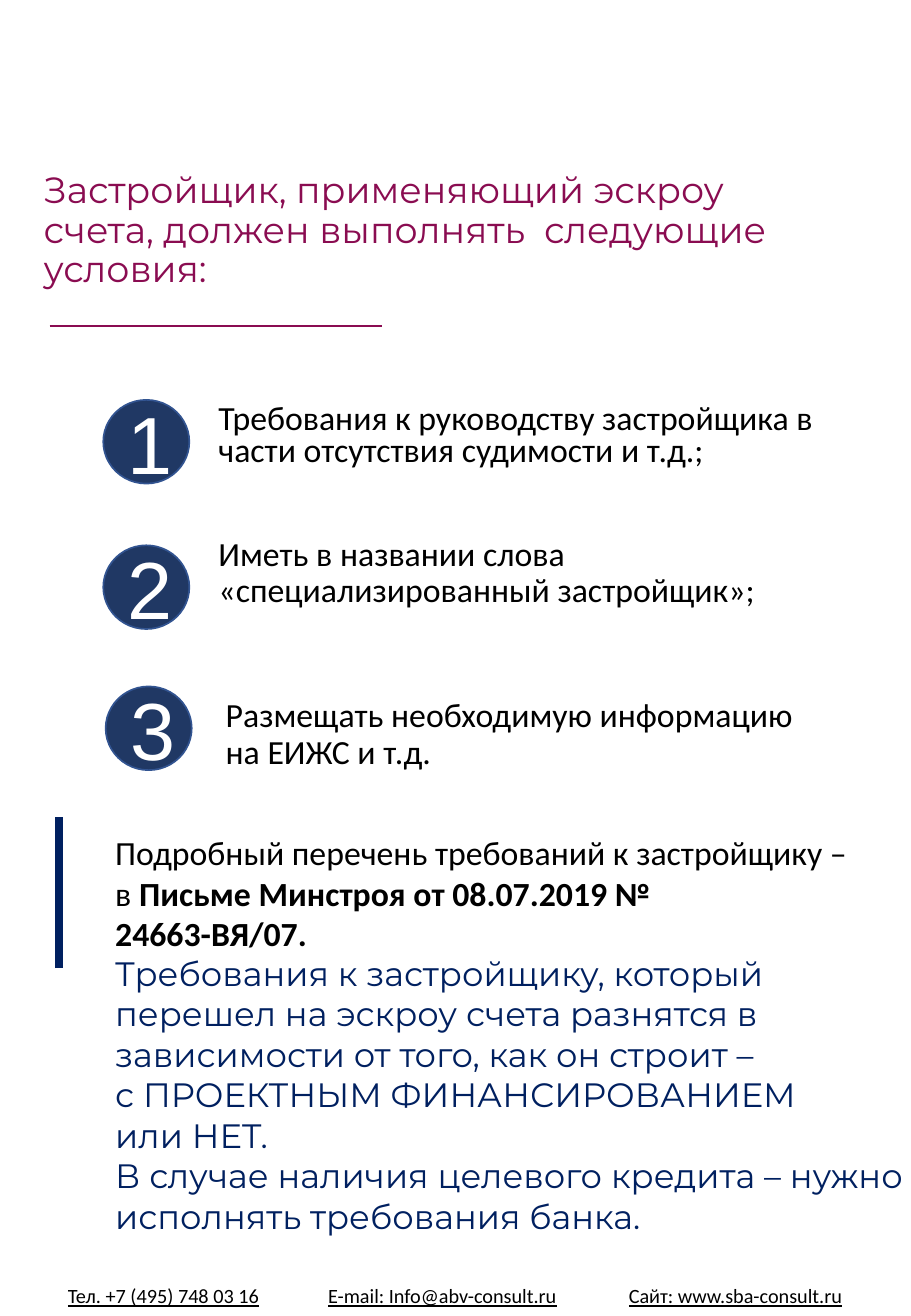
from dataclasses import dataclass

from lxml.etree import SubElement
from pptx import Presentation
from pptx.dml.color import RGBColor
from pptx.enum.shapes import MSO_CONNECTOR, MSO_SHAPE
from pptx.enum.text import MSO_ANCHOR, MSO_AUTO_SIZE, PP_ALIGN
from pptx.oxml.ns import qn
from pptx.slide import Slide
from pptx.text.text import TextFrame
from pptx.util import Cm, Pt

PLUM, NAVY, BLACK, WHITE = "8A0C51", "002060", "000000", "FFFFFF"
BADGE_FILL, BADGE_LINE = "203864", "325491"


@dataclass
class Style:
    font: str
    size: float
    color: str
    spacing: float = 1.0
    align: PP_ALIGN = PP_ALIGN.LEFT
    underline: bool = False


@dataclass
class Condition:
    badge_left: float
    badge_top: float
    text_left: float
    text_top: float
    spacing: float
    text: str


@dataclass
class Rule:
    start: tuple[float, float]
    end: tuple[float, float]
    color: str
    width: float


CONDITIONS = [
    Condition(2.16, 8.36, 4.32, 8.33, 0.8,
              "Требования к руководству застройщика в части отсутствия судимости и т.д.;"),
    Condition(2.16, 11.4, 4.32, 11.1, 0.9,
              "Иметь в названии слова «специализированный застройщик»;"),
    Condition(2.21, 14.35, 4.47, 14.48, 0.9,
              "Размещать необходимую информацию на ЕИЖС и т.д."),
]
RULES = [
    Rule((1.04, 6.81), (7.98, 6.81), PLUM, 1.5),
    Rule((1.24, 20.24), (1.24, 17.07), NAVY, 4.5),
]
BANK_TERMS = [
    "Требования к застройщику, который перешел на эскроу счета разнятся "
    "в зависимости от того, как он строит –",
    "с ПРОЕКТНЫМ ФИНАНСИРОВАНИЕМ",
    "или НЕТ.",
    "В случае наличия целевого кредита – нужно исполнять требования банка.",
]
CONTACTS = [
    "Тел. +7 (495) 748 03 16",
    "E-mail: Info@abv-consult.ru",
    "Сайт: www.sba-consult.ru",
]
CONTACT_TABS = [5.44, 11.73]


def rgb(color: str) -> RGBColor:
    return RGBColor.from_string(color)


def write(frame: TextFrame, lines: list[str], style: Style,
          tabs: list[float] | None = None) -> None:
    """Fill a frame with one paragraph per line."""
    frame.word_wrap = True
    frame.auto_size = MSO_AUTO_SIZE.NONE
    frame.text = "\n".join(lines)
    for paragraph in frame.paragraphs:
        paragraph.alignment = style.align
        paragraph.line_spacing = style.spacing
        if tabs:
            tab_list = SubElement(paragraph._p.get_or_add_pPr(), qn("a:tabLst"))
            for stop in tabs:
                SubElement(tab_list, qn("a:tab"), pos=str(int(Cm(stop))), algn="l")
        font = paragraph.font
        font.name, font.size = style.font, Pt(style.size)
        font.color.rgb = rgb(style.color)
        if style.underline:
            font.underline = True


def add_text(slide: Slide, left: float, top: float, width: float, height: float,
             lines: list[str], style: Style, tabs: list[float] | None = None) -> TextFrame:
    frame = slide.shapes.add_textbox(Cm(left), Cm(top), Cm(width), Cm(height)).text_frame
    write(frame, lines, style, tabs)
    return frame


def add_rule(slide: Slide, rule: Rule) -> None:
    line = slide.shapes.add_connector(
        MSO_CONNECTOR.STRAIGHT, *map(Cm, rule.start), *map(Cm, rule.end))
    line.line.color.rgb = rgb(rule.color)
    line.line.width = Pt(rule.width)
    SubElement(line._element.spPr, qn("a:effectLst"))


def add_condition(slide: Slide, number: int, condition: Condition) -> None:
    badge = slide.shapes.add_shape(
        MSO_SHAPE.OVAL, Cm(condition.badge_left), Cm(condition.badge_top), Cm(1.8), Cm(1.75))
    badge.shadow.inherit = False
    badge.fill.solid()
    badge.fill.fore_color.rgb = rgb(BADGE_FILL)
    badge.line.color.rgb = rgb(BADGE_LINE)
    badge.line.width = Pt(1)
    badge.text_frame.vertical_anchor = MSO_ANCHOR.MIDDLE
    write(badge.text_frame, [str(number)], Style("Arial", 48, WHITE, align=PP_ALIGN.CENTER))
    add_text(slide, condition.text_left, condition.text_top, 13.16, 1.75,
             [condition.text], Style("Calibri", 20, BLACK, condition.spacing))


def add_title(slide: Slide) -> None:
    title = slide.shapes.title
    title.left, title.top, title.width, title.height = map(Cm, (0.66, 4.37, 16.81, 1.75))
    title.text_frame.vertical_anchor = MSO_ANCHOR.MIDDLE
    title.text_frame.margin_bottom = Cm(0.94)
    write(title.text_frame,
          ["Застройщик, применяющий эскроу счета, должен выполнять  следующие условия:"],
          Style("Montserrat", 21.6, PLUM, 0.9))


def main() -> None:
    presentation = Presentation()
    presentation.slide_width, presentation.slide_height = Cm(19.05), Cm(27.51)
    slide = presentation.slides.add_slide(presentation.slide_layouts[5])

    add_title(slide)
    for rule in RULES:
        add_rule(slide, rule)
    for number, condition in enumerate(CONDITIONS, start=1):
        add_condition(slide, number, condition)

    add_text(slide, 2.16, 19.79, 17.25, 6.25, BANK_TERMS, Style("Montserrat", 20, NAVY))
    add_text(slide, 1.17, 26.7, 17.58, 1.27, ["\t".join(CONTACTS)],
             Style("Calibri", 12, BLACK, underline=True), CONTACT_TABS)
    letter = add_text(slide, 2.16, 17.27, 15.85, 1.96,
                      ["Подробный перечень требований к застройщику –", "в "],
                      Style("Calibri", 20, BLACK))
    reference = letter.paragraphs[1].add_run()
    reference.text = "Письме Минстроя от 08.07.2019 № 24663-ВЯ/07."
    reference.font.bold = True

    presentation.save("out.pptx")


if __name__ == "__main__":
    main()
